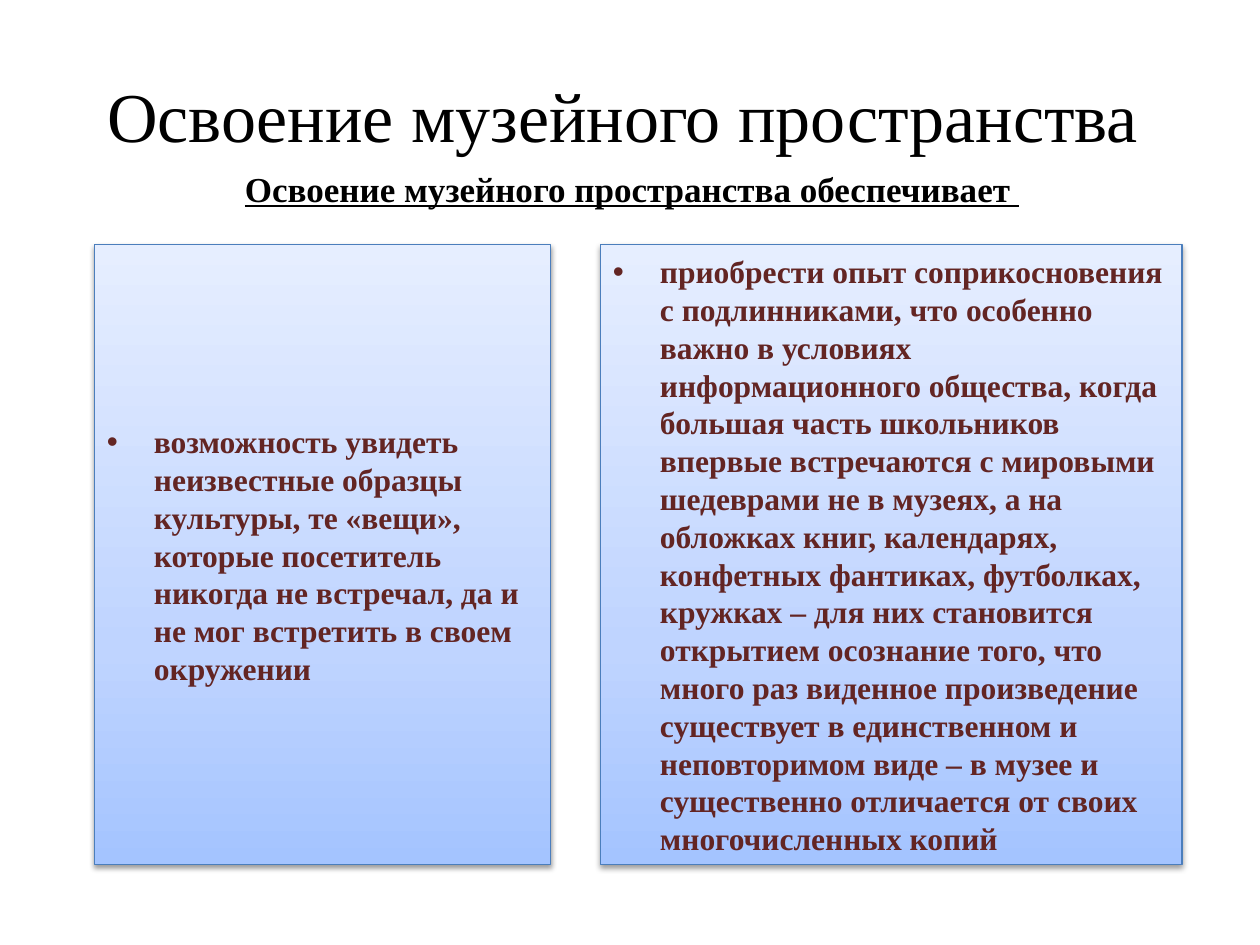
from dataclasses import dataclass

from lxml import etree
from pptx import Presentation
from pptx.dml.color import RGBColor
from pptx.enum.text import MSO_ANCHOR, MSO_AUTO_SIZE, PP_ALIGN
from pptx.oxml.ns import qn
from pptx.util import Cm, Pt

CENTER, LEFT = PP_ALIGN.CENTER, PP_ALIGN.LEFT
MIDDLE = MSO_ANCHOR.MIDDLE
NO_AUTOFIT = MSO_AUTO_SIZE.NONE
TWO_CONTENT_LAYOUT = 3


@dataclass(frozen=True)
class Theme:
    font: str = "Times New Roman"
    title_size: int = 40
    subtitle_size: int = 20
    body_size: int = 18
    heading: str = "000000"
    body: str = "632523"
    border: str = "4B7EBC"
    shadow: str = "000000"
    # (position in percent, colour), from the bottom of a panel upwards
    gradient: tuple = ((0, "A4C4FF"), (35, "BFD4FF"), (100, "E6EEFF"))


THEME = Theme()
PANEL_TOP, PANEL_HEIGHT = 4.93, 12.5
BULLET_INDENT = Cm(0.95)

TITLE = "Освоение музейного пространства "
SUBTITLE = "Освоение музейного пространства обеспечивает "
# left edge and width in cm, then the text
PANELS = [
    (1.9, 9.2,
     "возможность увидеть неизвестные образцы культуры, те «вещи», которые "
     "посетитель никогда не встречал, да и не мог встретить в своем окружении"),
    (12.1, 11.73,
     "приобрести опыт соприкосновения с подлинниками, что особенно важно в "
     "условиях информационного общества, когда большая часть школьников впервые "
     "встречаются с мировыми шедеврами не в музеях, а на обложках книг, календарях, "
     "конфетных фантиках, футболках, кружках – для них становится открытием "
     "осознание того, что много раз виденное произведение существует в единственном "
     "и неповторимом виде – в музее и существенно отличается от своих "
     "многочисленных копий"),
]


def place(shape, left, top, width, height):
    shape.left, shape.top = Cm(left), Cm(top)
    shape.width, shape.height = Cm(width), Cm(height)


def add_child(parent, tag, **attributes):
    values = {name: str(value) for name, value in attributes.items()}
    return etree.SubElement(parent, qn(tag), values)


def write(shape, text, size, color, align, bold=False, underline=False):
    frame = shape.text_frame
    frame.word_wrap = True
    frame.auto_size = NO_AUTOFIT
    paragraph = frame.paragraphs[0]
    paragraph.text = text
    paragraph.alignment = align
    paragraph.space_before = Pt(0)
    font = paragraph.font
    font.name, font.size = THEME.font, Pt(size)
    font.bold, font.underline = bold, underline
    font.color.rgb = RGBColor.from_string(color)
    return paragraph


def add_bullet(paragraph):
    properties = paragraph._p.get_or_add_pPr()
    properties.set("marL", str(BULLET_INDENT))
    properties.set("indent", str(-BULLET_INDENT))
    add_child(properties, "a:buFont", typeface="Arial")
    add_child(properties, "a:buChar", char="•")


def fill_gradient(shape):
    shape.fill.gradient()
    shape.fill.gradient_angle = 90
    stops = shape._element.spPr.find(".//" + qn("a:gsLst"))
    for stop in list(stops):
        stops.remove(stop)
    for percent, color in THEME.gradient:
        stop = add_child(stops, "a:gs", pos=percent * 1000)
        add_child(stop, "a:srgbClr", val=color)


def add_shadow(shape):
    effects = add_child(shape._element.spPr, "a:effectLst")
    shadow = add_child(effects, "a:outerShdw", blurRad=Pt(3.1), dist=Pt(1.6),
                       dir=90 * 60000, rotWithShape=0)
    color = add_child(shadow, "a:srgbClr", val=THEME.shadow)
    add_child(color, "a:alpha", val=38000)


def build_panel(panel, left, width, text):
    place(panel, left, PANEL_TOP, width, PANEL_HEIGHT)
    fill_gradient(panel)
    panel.line.color.rgb = RGBColor.from_string(THEME.border)
    panel.line.width = Pt(0.75)
    add_shadow(panel)
    panel.text_frame.vertical_anchor = MIDDLE
    paragraph = panel.text_frame.paragraphs[0]
    paragraph.space_before = Pt(0)
    add_bullet(paragraph)
    write(panel, text, THEME.body_size, THEME.body, LEFT, bold=True)


def main():
    presentation = Presentation()
    presentation.slide_width, presentation.slide_height = Cm(25.4), Cm(19.05)
    slide = presentation.slides.add_slide(
        presentation.slide_layouts[TWO_CONTENT_LAYOUT])

    title = slide.shapes.title
    place(title, 1.3, 1.32, 22.86, 1.98)
    title.text_frame.vertical_anchor = MIDDLE
    write(title, TITLE, THEME.title_size, THEME.heading, CENTER)

    subtitle = slide.shapes.add_textbox(Cm(1.63), Cm(3.25), Cm(22.23), Cm(1.12))
    write(subtitle, SUBTITLE, THEME.subtitle_size, THEME.heading, CENTER,
          bold=True, underline=True)

    for index, (left, width, text) in enumerate(PANELS, start=1):
        build_panel(slide.placeholders[index], left, width, text)

    presentation.save("out.pptx")


if __name__ == "__main__":
    main()
